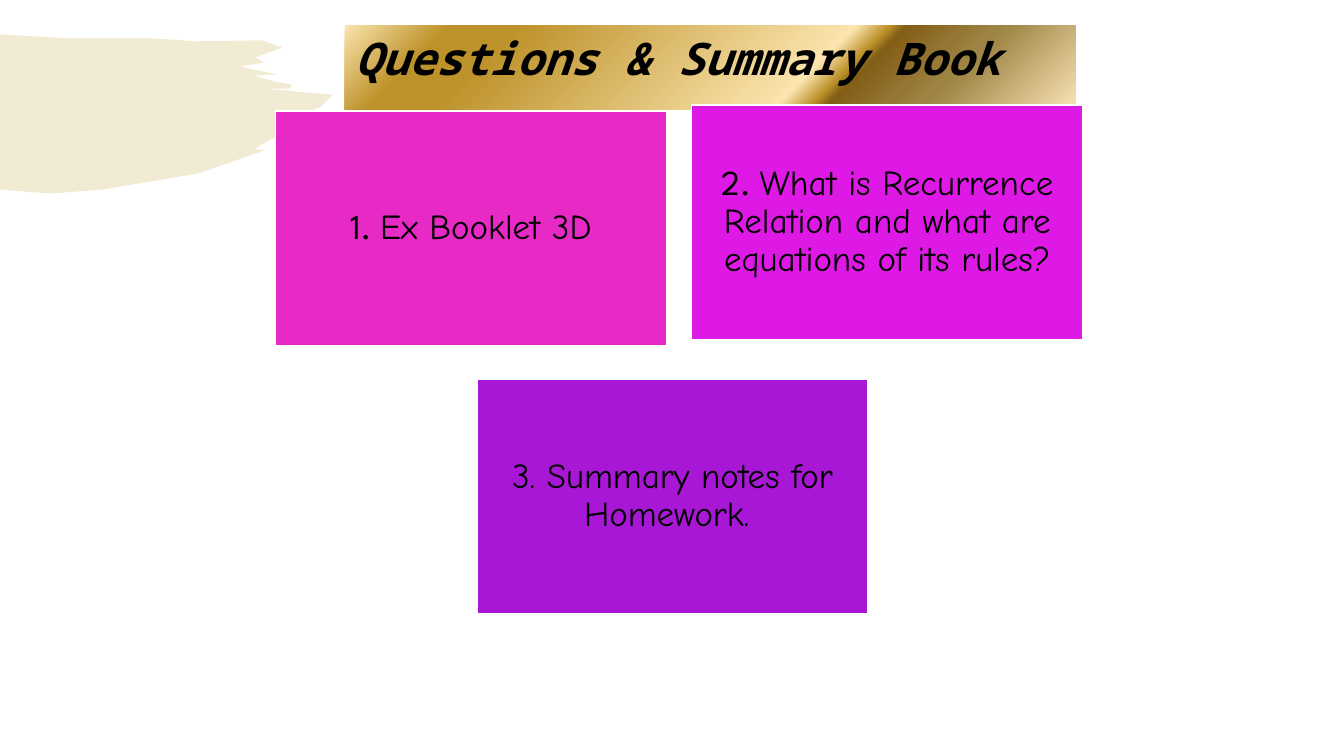
import pptx
import pptx.util
import pptx.dml.color
import pptx.enum.shapes
import pptx.enum.text
import pptx.oxml
import pptx.oxml.ns
import lxml.etree

# Content: lengths in px, 100 px to the inch
PX = 9144
SLIDE_SIZE = (1333, 750)
COLOURS = {"text": "000000", "card_line": "FFFFFF", "brush": "B79F20",
           "pink": "E729C5", "magenta": "DF19E5", "purple": "A817D5",
           "pale": "FBE4AE", "gold": "BD922A", "brown": "835E17",
           "bronze": "A28949", "cream": "FAE3B7"}
FONTS = {"title": "Noto Sans Mono", "number": "League Spartan", "body": "Comic Neue"}

TITLE = "Questions & Summary Book"
TITLE_BOX = (342, 25, 725, 64)
GOLD_STOPS = [(0, "pale"), (13, "gold"), (21, "gold"), (63, "pale"),
              (67, "gold"), (69, "brown"), (82, "bronze"), (100, "cream")]

CARD_SIZE = (388, 233)
CARDS = [
    ((273, 110), "pink", [("1. ", "number"), ("Ex Booklet 3D", "body")]),
    ((686, 104), "magenta", [
        ("2. ", "number"),
        ("What is Recurrence Relation and what are equations of its rules?", "body")]),
    ((473, 376), "purple", [("3. Summary notes for Homework. ", "body")]),
]

# Corners of the brush stroke, clockwise from the top left
BRUSH = [(0, 34), (66, 38), (151, 38), (194, 41), (260, 40), (280, 47),
         (253, 57), (262, 62), (238, 66), (275, 74), (251, 75), (273, 81),
         (290, 84), (287, 88), (263, 88), (330, 94), (318, 106), (300, 113),
         (280, 120), (274, 128), (308, 128), (269, 138), (252, 148), (263, 149),
         (197, 172), (102, 188), (50, 192), (0, 188)]


def colour(name):
    return pptx.dml.color.RGBColor.from_string(COLOURS[name])


def emu(lengths):
    return [length * PX for length in lengths]


def add_run(paragraph, text, font, size):
    run = paragraph.add_run()
    run.text = text
    run.font.name = FONTS[font]
    run.font.size = pptx.util.Pt(size)
    run.font.color.rgb = colour("text")
    return run


def add_brush(slide):
    builder = slide.shapes.build_freeform(*BRUSH[0], scale=PX)
    builder.add_line_segments(BRUSH[1:], close=True)
    brush = builder.convert_to_shape()
    brush.shadow.inherit = False
    brush.line.fill.background()
    brush.fill.solid()
    brush.fill.fore_color.rgb = colour("brush")
    solid = brush.fill._xPr.find(pptx.oxml.ns.qn("a:solidFill"))
    lxml.etree.SubElement(solid[0], pptx.oxml.ns.qn("a:alpha"), val="20000")


def add_title(slide):
    title = slide.shapes.title
    title.left, title.top, title.width, title.height = emu(TITLE_BOX)
    # Gold gradient
    title.fill.gradient()
    title.fill.gradient_angle = 315
    gradient = title.fill._xPr.find(pptx.oxml.ns.qn("a:gradFill"))
    stops = gradient.find(pptx.oxml.ns.qn("a:gsLst"))
    for stop in list(stops):
        stops.remove(stop)
    for position, name in GOLD_STOPS:
        stop = lxml.etree.SubElement(stops, pptx.oxml.ns.qn("a:gs"), pos=str(position * 1000))
        lxml.etree.SubElement(stop, pptx.oxml.ns.qn("a:srgbClr"), val=COLOURS[name])
    # Text
    frame = title.text_frame
    frame.word_wrap = True
    frame.auto_size = pptx.enum.text.MSO_AUTO_SIZE.SHAPE_TO_FIT_TEXT
    frame.vertical_anchor = pptx.enum.text.MSO_ANCHOR.TOP
    paragraph = frame.paragraphs[0]
    paragraph.alignment = pptx.enum.text.PP_ALIGN.JUSTIFY
    run = add_run(paragraph, TITLE, "title", 32)
    run.font.bold = run.font.italic = True


def add_card(slide, corner, fill, runs):
    card = slide.shapes.add_shape(
        pptx.enum.shapes.MSO_SHAPE.RECTANGLE, *emu(corner + CARD_SIZE))
    card.shadow.inherit = False
    card.fill.solid()
    card.fill.fore_color.rgb = colour(fill)
    card.line.color.rgb = colour("card_line")
    card.line.width = pptx.util.Pt(1)
    frame = card.text_frame
    frame.word_wrap = True
    frame.vertical_anchor = pptx.enum.text.MSO_ANCHOR.MIDDLE
    frame.margin_left = frame.margin_right = frame.margin_top = frame.margin_bottom = 10 * PX
    paragraph = frame.paragraphs[0]
    paragraph.alignment = pptx.enum.text.PP_ALIGN.CENTER
    paragraph.line_spacing = 0.9
    for text, font in runs:
        add_run(paragraph, text, font, 25)


def main():
    presentation = pptx.Presentation()
    presentation.slide_width, presentation.slide_height = emu(SLIDE_SIZE)
    slide = presentation.slides.add_slide(presentation.slide_layouts[5])
    add_brush(slide)
    add_title(slide)
    for corner, fill, runs in CARDS:
        add_card(slide, corner, fill, runs)
    presentation.save("out.pptx")


if __name__ == "__main__":
    main()
